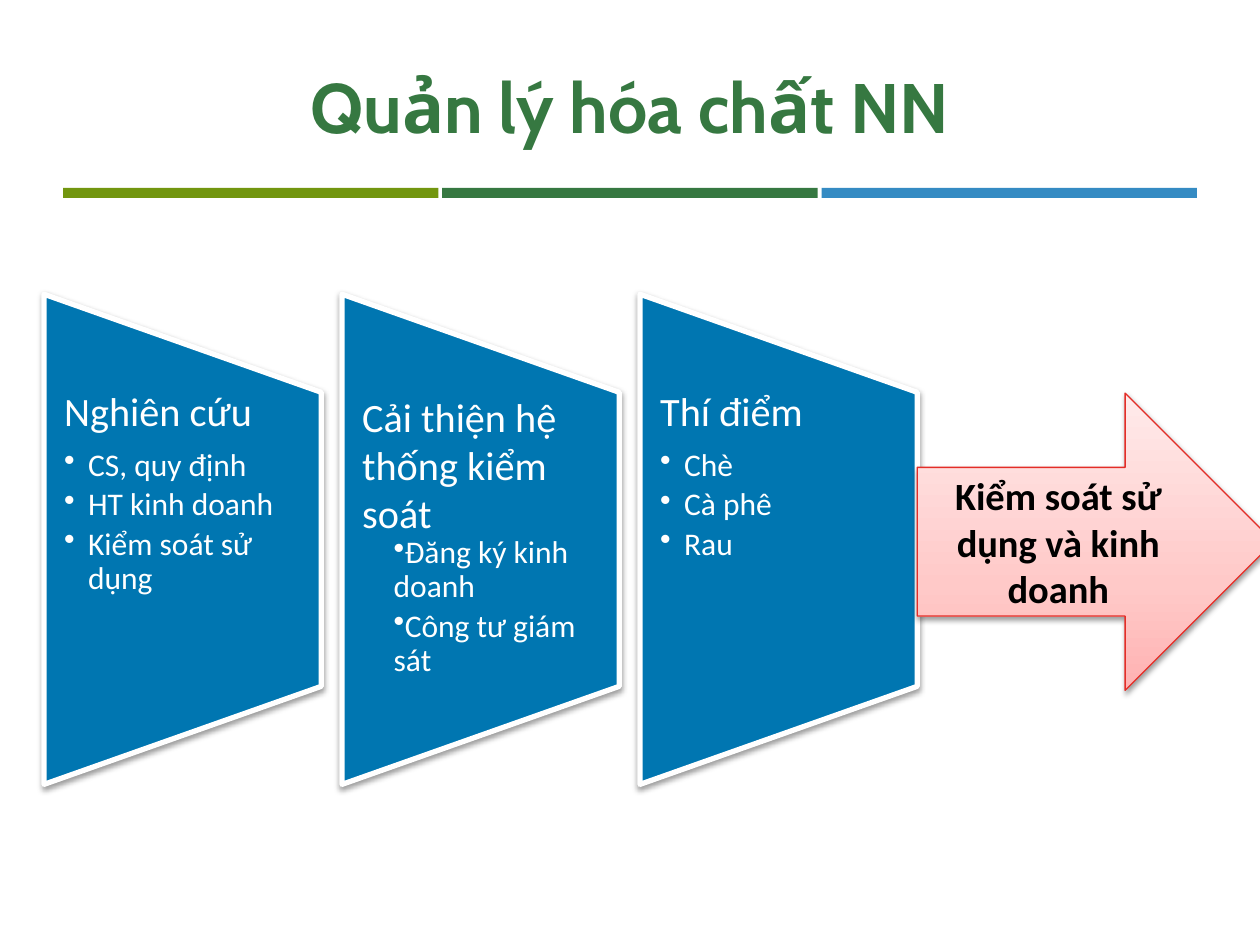
from lxml import etree
from pptx import Presentation
from pptx.dml.color import RGBColor
from pptx.enum import shapes, text
from pptx.oxml import parse_xml
from pptx.oxml.ns import nsdecls, qn
from pptx.util import Inches, Pt

OLIVE = RGBColor(0x72, 0x96, 0x0F)
GREEN = RGBColor(0x36, 0x78, 0x41)
SKY = RGBColor(0x35, 0x8B, 0xC3)
BLUE = RGBColor(0x00, 0x76, 0xB1)
RED = RGBColor(0xE4, 0x2D, 0x27)
WHITE = RGBColor(0xFF, 0xFF, 0xFF)
BLACK = RGBColor(0x00, 0x00, 0x00)
PINKS = [(0, RGBColor(0xFF, 0xB2, 0xB2)), (35, RGBColor(0xFF, 0xC9, 0xC8)),
         (100, RGBColor(0xFF, 0xEA, 0xEA))]

STEP_LEFT, STEP_PITCH, STEP_WIDTH, STEP_HEIGHT = 0.35, 2.365, 2.2, 3.89
STEP_MIDDLE = 4.28
HANGING, FLUSH = (0.19, -0.19), (0.25, 0)
STEPS = [
    ("Nghiên cứu", ["CS, quy định", "HT kinh doanh", "Kiểm soát sử dụng"], HANGING),
    ("Cải thiện hệ thống kiểm soát", ["Đăng ký kinh doanh", "Công tư giám sát"], FLUSH),
    ("Thí điểm", ["Chè", "Cà phê", "Rau"], HANGING),
]


def set_font(paragraph, name, size, color, bold=False):
    font = paragraph.font
    font.name, font.size, font.bold = name, Pt(size), bold
    font.color.rgb = color


def add_shadow(shape):
    shape.shadow.inherit = False
    effects = shape._element.spPr.find(qn("a:effectLst"))
    effects.append(parse_xml(
        f'<a:outerShdw {nsdecls("a")} blurRad="{Pt(3.1)}" dist="{Pt(1.6)}" dir="5400000"'
        ' rotWithShape="0"><a:srgbClr val="000000"><a:alpha val="38000"/></a:srgbClr>'
        '</a:outerShdw>'))


def fill_gradient(shape, stops):
    """Fill from bottom to top with (percent, colour) stops."""
    stop_xml = "".join(f'<a:gs pos="{percent * 1000}"><a:srgbClr val="{color}"/></a:gs>'
                       for percent, color in stops)
    shape._element.spPr.find(qn("a:prstGeom")).addnext(parse_xml(
        f'<a:gradFill {nsdecls("a")} rotWithShape="1"><a:gsLst>{stop_xml}</a:gsLst>'
        '<a:lin ang="16200000" scaled="0"/></a:gradFill>'))


def add_bullet(paragraph, margin, indent):
    properties = paragraph._p.get_or_add_pPr()
    properties.set("marL", str(Inches(margin)))
    properties.set("indent", str(Inches(indent)))
    etree.SubElement(properties, qn("a:buChar")).set("char", "•")


def add_title(slide, wording):
    title = slide.shapes.title
    title.left, title.top, title.width, title.height = map(Inches, (0.5, 0.3, 9, 1.08))
    title.text_frame.text = wording
    title.text_frame.vertical_anchor = text.MSO_ANCHOR.MIDDLE
    heading = title.text_frame.paragraphs[0]
    heading.alignment = text.PP_ALIGN.CENTER
    set_font(heading, "Cabin", 40, GREEN, bold=True)


def add_rule(slide):
    for index, color in enumerate((OLIVE, GREEN, SKY)):
        bar = slide.shapes.add_shape(
            shapes.MSO_SHAPE.RECTANGLE, Inches(0.5 + 3.01 * index), Inches(1.49),
            Inches(2.98), Inches(0.08))
        bar.shadow.inherit = False
        bar.fill.solid()
        bar.fill.fore_color.rgb = color
        bar.line.fill.background()


def add_step(slide, left, heading, items, bullet_indents):
    # The panel is turned a quarter, so its frame is centred on the upright column.
    panel = slide.shapes.add_shape(
        shapes.MSO_SHAPE.FLOWCHART_MANUAL_OPERATION,
        Inches(left + (STEP_WIDTH - STEP_HEIGHT) / 2), Inches(STEP_MIDDLE - STEP_WIDTH / 2),
        Inches(STEP_HEIGHT), Inches(STEP_WIDTH))
    panel.rotation = 270
    panel.fill.solid()
    panel.fill.fore_color.rgb = BLUE
    panel.line.color.rgb = WHITE
    panel.line.width = Pt(3)
    add_shadow(panel)

    frame = slide.shapes.add_textbox(
        Inches(left), Inches(3.11), Inches(STEP_WIDTH), Inches(2.33)).text_frame
    frame.word_wrap = True
    frame.margin_left = frame.margin_right = Inches(0.16)
    frame.margin_top = frame.margin_bottom = 0
    lead = frame.paragraphs[0]
    lead.text = heading
    if bullet_indents == HANGING:
        lead.line_spacing = 0.9
        lead.space_after = Pt(8)
    set_font(lead, "Calibri", 23, WHITE)
    for item in items:
        point = frame.add_paragraph()
        point.text = item
        point.level = 1
        add_bullet(point, *bullet_indents)
        point.line_spacing = 0.9
        point.space_after = Pt(3)
        set_font(point, "Calibri", 18, WHITE)


def add_outcome_arrow(slide, wording):
    arrow = slide.shapes.add_shape(
        shapes.MSO_SHAPE.RIGHT_ARROW, Inches(7.28), Inches(3.12), Inches(2.83), Inches(2.36))
    fill_gradient(arrow, PINKS)
    arrow.line.color.rgb = RED
    arrow.line.width = Pt(0.75)
    add_shadow(arrow)
    frame = arrow.text_frame
    frame.word_wrap = True
    frame.vertical_anchor = text.MSO_ANCHOR.MIDDLE
    outcome = frame.paragraphs[0]
    outcome.text = wording
    outcome.alignment = text.PP_ALIGN.CENTER
    set_font(outcome, "Calibri", 22, BLACK, bold=True)


def main():
    deck = Presentation()
    deck.slide_width, deck.slide_height = Inches(10), Inches(7.5)
    slide = deck.slides.add_slide(deck.slide_layouts.get_by_name("Title Only"))
    add_rule(slide)
    add_title(slide, "Quản lý hóa chất NN")
    for index, step in enumerate(STEPS):
        add_step(slide, STEP_LEFT + STEP_PITCH * index, *step)
    add_outcome_arrow(slide, "Kiểm soát sử dụng và kinh doanh")
    deck.save("out.pptx")


if __name__ == "__main__":
    main()
